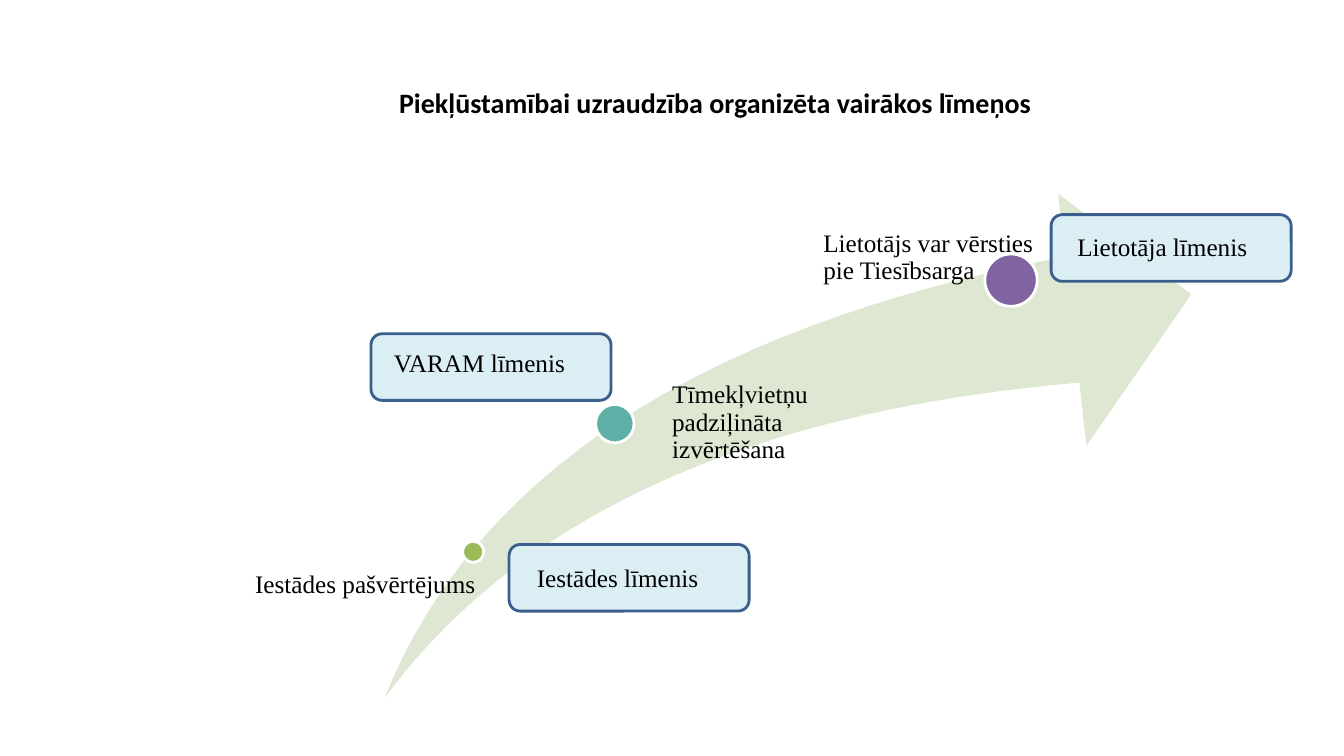
"""Build a slide on the levels of accessibility monitoring."""
from dataclasses import dataclass

from pptx import Presentation
from pptx.dml.color import RGBColor
from pptx.enum.shapes import MSO_SHAPE
from pptx.enum.text import PP_ALIGN
from pptx.util import Cm, Pt

ARROW = MSO_SHAPE.SWOOSH_ARROW
OVAL = MSO_SHAPE.OVAL
ROUND = MSO_SHAPE.ROUNDED_RECTANGLE
CENTER = PP_ALIGN.CENTER

COLORS = {
    "text": "000000", "arrow": "DEE7D1", "rim": "FFFFFF",
    "plate": "DBEEF4", "edge": "3A5F8C",
    "green": "9BBB59", "teal": "5EAFA6", "purple": "8064A2",
}
SERIF = "Times New Roman"
SANS = "Calibri"
PAD = (0.25, 0.13, 0.25, 0.13)

Box = tuple[float, float, float, float]


@dataclass
class Step:
    color: str
    dot: tuple[float, float, float]
    note: str
    area: Box
    inset: float


@dataclass
class Level:
    name: str
    plate: tuple[float, float]
    label: tuple[float, float, float]


STEPS = [
    Step("green", (11.66, 13.64, 0.53), "Iestādes pašvērtējums",
         (6.15, 14.4, 6.38, 1.35), 0.28),
    Step("teal", (15.01, 10.19, 0.97), "Tīmekļvietņu padziļināta izvērtēšana",
         (16.43, 9.63, 4.88, 2.08), 0.51),
    Step("purple", (24.82, 6.4, 1.32), "Lietotājs var vērsties pie Tiesībsarga",
         (20.04, 5.82, 6.32, 3.02), 0.71),
]
LEVELS = [
    Level("Lietotāja līmenis", (26.49, 5.41), (26.9, 5.69, 5.16)),
    Level("VARAM līmenis", (9.35, 8.41), (9.68, 8.61, 5.26)),
    Level("Iestādes līmenis", (12.83, 13.72), (13.28, 14.05, 5.59)),
]


def paint(key: str) -> RGBColor:
    return RGBColor.from_string(COLORS[key])


def add_form(slide, kind, box: Box, fill: str, line: str | None = None):
    form = slide.shapes.add_shape(kind, *map(Cm, box))
    form.shadow.inherit = False
    form.fill.solid()
    form.fill.fore_color.rgb = paint(fill)
    if line:
        form.line.color.rgb = paint(line)
        form.line.width = Pt(2)
    else:
        form.line.fill.background()
    return form


def add_text(slide, text: str, box: Box, pad: Box = PAD, size: int = 18,
             face: str = SERIF, bold: bool = False):
    frame = slide.shapes.add_textbox(*map(Cm, box)).text_frame
    frame.word_wrap = True
    (frame.margin_left, frame.margin_top,
     frame.margin_right, frame.margin_bottom) = map(Cm, pad)
    frame.text = text
    line = frame.paragraphs[0]
    font = line.runs[0].font
    font.name, font.size, font.bold = face, Pt(size), bold
    font.color.rgb = paint("text")
    return line


def add_step(slide, step: Step) -> None:
    left, top, size = step.dot
    add_form(slide, OVAL, (left, top, size, size), step.color, "rim")
    note = add_text(slide, step.note, step.area, (step.inset, 0, 0, 0))
    note.line_spacing = 0.9


def add_level(slide, level: Level) -> None:
    add_form(slide, ROUND, (*level.plate, 6.05, 1.68), "plate", "edge")
    add_text(slide, level.name, (*level.label, 1.02))


def main() -> None:
    deck = Presentation()
    deck.slide_width, deck.slide_height = Cm(33.87), Cm(19.05)
    slide = deck.slides.add_slide(deck.slide_layouts[6])
    title = add_text(slide, "Piekļūstamībai uzraudzība organizēta vairākos līmeņos ",
                     (7.16, 2.03, 21.89, 1.3), size=20, face=SANS, bold=True)
    title.alignment = CENTER
    arrow = add_form(slide, ARROW, (9.7, 4.88, 20.32, 12.7), "arrow")
    arrow.adjustments[0] = arrow.adjustments[1] = 0.25
    for step in STEPS:
        add_step(slide, step)
    for level in LEVELS:
        add_level(slide, level)
    deck.save("out.pptx")


if __name__ == "__main__":
    main()
